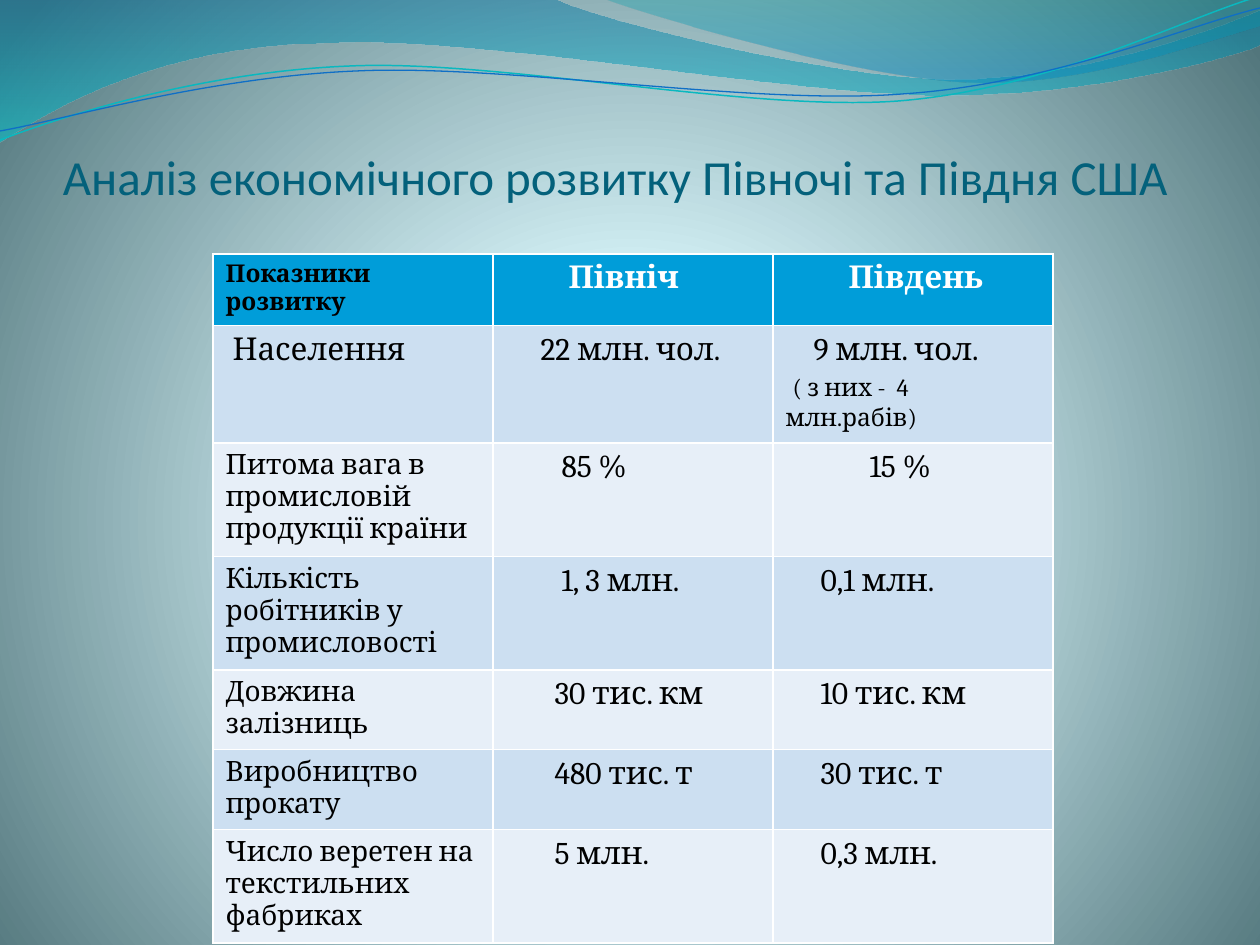
from dataclasses import dataclass
from typing import Optional

from lxml.etree import SubElement
from pptx import Presentation
from pptx.dml.color import RGBColor
from pptx.enum.text import MSO_ANCHOR
from pptx.oxml.ns import qn
from pptx.util import Emu, Inches, Pt

EMU_PER_PX = 914400 / 126

BLACK = RGBColor(0x00, 0x00, 0x00)
WHITE = RGBColor(0xFF, 0xFF, 0xFF)
TITLE_TEAL = RGBColor(0x04, 0x61, 0x7B)
HEADER_BLUE = RGBColor(0x00, 0x9D, 0xD9)
BAND_DARK = RGBColor(0xCC, 0xDF, 0xF1)
BAND_LIGHT = RGBColor(0xE7, 0xEF, 0xF8)
GLOW = RGBColor(0xDE, 0xFB, 0xFF)
GLOW_EDGE = RGBColor(0xDD, 0xFA, 0xFF)
DEEP_TEAL = RGBColor(0x52, 0x76, 0x7C)
WAVE_BLUE = RGBColor(0x00, 0x74, 0xA1)
WAVE_CYAN = RGBColor(0x00, 0xC6, 0xCF)
CREST_TEAL = RGBColor(0x00, 0xA1, 0xA9)
CREST_BLUE = RGBColor(0x00, 0x8B, 0xBF)
LINE_CYAN = RGBColor(0x0A, 0xB8, 0xBF)
LINE_BLUE = RGBColor(0x0F, 0x6F, 0xC6)


@dataclass(frozen=True)
class Stop:
    position: int
    color: RGBColor
    opacity: int = 100


@dataclass(frozen=True)
class Ribbon:
    """Segments hold one point (a straight line) or three (a cubic curve)."""
    start: tuple
    segments: list
    stops: tuple = ()
    line_color: Optional[RGBColor] = None
    line_width: float = 0


@dataclass(frozen=True)
class Span:
    text: str
    size: int = 18


@dataclass(frozen=True)
class Line:
    spans: list
    indent: int = 0


RIBBONS = [
    Ribbon((0, 0), [
        [(554, -1)],
        [(600, 21), (837, 79), (955, 79)],
        [(1075, 79), (1207, 33), (1260, 11)],
        [(1261, 45)],
        [(1239, 55), (1096, 96), (940, 95)],
        [(784, 95), (481, 35), (324, 43)],
        [(163, 45), (58, 105), (-1, 142)],
    ], stops=(Stop(0, WAVE_BLUE, 45), Stop(100, WAVE_CYAN, 55))),
    Ribbon((604, -1), [
        [(641, 14), (859, 78), (969, 82)],
        [(1079, 87), (1211, 40), (1260, 26)],
        [(1260, 0)],
    ], stops=(Stop(0, CREST_TEAL, 30), Stop(80, CREST_BLUE, 45))),
    Ribbon((0, 140), [
        [(60, 117), (199, 72), (349, 66)],
        [(498, 59), (747, 112), (898, 101)],
        [(1050, 89), (1182, 19), (1257, -3)],
    ], line_color=LINE_CYAN, line_width=0.85),
    Ribbon((0, 131), [
        [(59, 121), (207, 77), (357, 71)],
        [(508, 64), (752, 106), (903, 94)],
        [(1053, 84), (1186, 26), (1260, 8)],
    ], line_color=LINE_BLUE, line_width=0.75),
]


def entry(text: str, indent: int = 0, size: int = 18) -> list[Line]:
    return [Line([Span(text, size)], indent)]


ROWS = [
    [entry("Показники розвитку", size=14), entry("Північ", 63), entry("Південь", 63)],
    [entry("Населення", 7), entry("22 млн. чол.", 35),
     entry("9 млн. чол.", 28) + [Line([Span(" "), Span("( з них -  4 млн.рабів)", 14)])]],
    [entry("Питома вага в промисловій продукції країни", size=16),
     entry("85 %", 56), entry("15 %", 84)],
    [entry("Кількість робітників у промисловості", size=16),
     entry("1, 3 млн.", 56), entry("0,1 млн.", 35)],
    [entry("Довжина залізниць", size=16), entry("30 тис. км", 49), entry("10 тис. км", 35)],
    [entry("Виробництво прокату", size=16), entry("480 тис. т", 49), entry("30 тис. т", 35)],
    [entry("Число веретен на текстильних фабриках", size=16),
     entry("5 млн.", 49), entry("0,3 млн.", 35)],
]
ROW_HEIGHT = 52
COLUMN_WIDTH = 280


def px(value: float) -> Emu:
    return Emu(round(value * EMU_PER_PX))


def set_gradient(fill, owner, stops: tuple, radial: bool = False) -> None:
    """Fill with the stops, from top to bottom or around a circle."""
    fill.gradient()
    gradient = owner.xpath(".//a:gradFill")[0]
    for child in list(gradient):
        gradient.remove(child)
    stop_list = SubElement(gradient, qn("a:gsLst"))
    for stop in stops:
        mark = SubElement(stop_list, qn("a:gs"), pos=str(stop.position * 1000))
        color = SubElement(mark, qn("a:srgbClr"), val=str(stop.color))
        if stop.opacity < 100:
            SubElement(color, qn("a:alpha"), val=str(stop.opacity * 1000))
    if radial:
        circle = SubElement(gradient, qn("a:path"), path="circle")
        SubElement(circle, qn("a:fillToRect"), l="10000", t="110000", r="10000", b="100000")
    else:
        SubElement(gradient, qn("a:lin"), ang="5400000", scaled="0")


def bend_segments(shape, segments: list) -> None:
    """Join the three straight steps of each curve into one cubic curve."""
    outline = shape._element.xpath(".//a:custGeom/a:pathLst/a:path")[0]
    steps = iter(outline.findall(qn("a:lnTo")))
    for segment in segments:
        curve = next(steps)
        if len(segment) == 3:
            curve.tag = qn("a:cubicBezTo")
            for step in (next(steps), next(steps)):
                curve.append(step[0])
                outline.remove(step)


def draw_ribbon(slide, ribbon: Ribbon) -> None:
    points = [ribbon.start] + [point for segment in ribbon.segments for point in segment]
    corners = [(px(x), px(y)) for x, y in points]
    builder = slide.shapes.build_freeform(*corners[0], scale=1.0)
    builder.add_line_segments(corners[1:], close=bool(ribbon.stops))
    shape = builder.convert_to_shape()
    bend_segments(shape, ribbon.segments)
    shape.shadow.inherit = False
    if ribbon.stops:
        shape.line.fill.background()
        set_gradient(shape.fill, shape._element.spPr, ribbon.stops)
    else:
        shape.fill.background()
        shape.line.color.rgb = ribbon.line_color
        shape.line.width = Pt(ribbon.line_width)


def add_span(para, text: str, size: int, font: str, color: RGBColor, bold: bool = False) -> None:
    span = para.add_run()
    span.text = text
    span.font.size = Pt(size)
    span.font.name = font
    span.font.bold = bold
    span.font.color.rgb = color


def draw_title(slide) -> None:
    box = slide.shapes.add_textbox(px(63), px(66), px(1144), px(139))
    frame = box.text_frame
    frame.word_wrap = True
    frame.vertical_anchor = MSO_ANCHOR.BOTTOM
    frame.margin_left = frame.margin_right = frame.margin_bottom = 0
    frame.margin_top = Inches(0.05)
    add_span(frame.paragraphs[0], "Аналіз економічного розвитку Півночі та Півдня США",
             28, "Calibri", TITLE_TEAL)


def fill_cell(cell, lines: list[Line], row: int) -> None:
    header = row == 0
    cell.fill.solid()
    cell.fill.fore_color.rgb = HEADER_BLUE if header else (BAND_LIGHT, BAND_DARK)[row % 2]
    frame = cell.text_frame
    for index, line in enumerate(lines):
        para = frame.add_paragraph() if index else frame.paragraphs[0]
        properties = para._p.get_or_add_pPr()
        properties.set("marL", "0")
        properties.set("indent", str(px(line.indent)))
        for span in line.spans:
            color = WHITE if header and line.indent else BLACK
            add_span(para, span.text, span.size, "Cambria", color, header)


def draw_table(slide) -> None:
    """The default table style supplies the white rules; rows grow to fit their text."""
    columns = len(ROWS[0])
    table = slide.shapes.add_table(len(ROWS), columns, px(213), px(254),
                                   px(COLUMN_WIDTH * columns), px(ROW_HEIGHT * len(ROWS))).table
    for column in table.columns:
        column.width = px(COLUMN_WIDTH)
    for row, entries in enumerate(ROWS):
        for column, lines in enumerate(entries):
            fill_cell(table.cell(row, column), lines, row)


def main() -> None:
    deck = Presentation()
    deck.slide_width, deck.slide_height = Inches(10), Inches(7.5)
    slide = deck.slides.add_slide(deck.slide_layouts[6])
    set_gradient(slide.background.fill, slide._element,
                 (Stop(0, GLOW), Stop(25, GLOW_EDGE), Stop(100, DEEP_TEAL)), radial=True)
    for ribbon in RIBBONS:
        draw_ribbon(slide, ribbon)
    draw_title(slide)
    draw_table(slide)
    deck.save("out.pptx")


if __name__ == "__main__":
    main()
